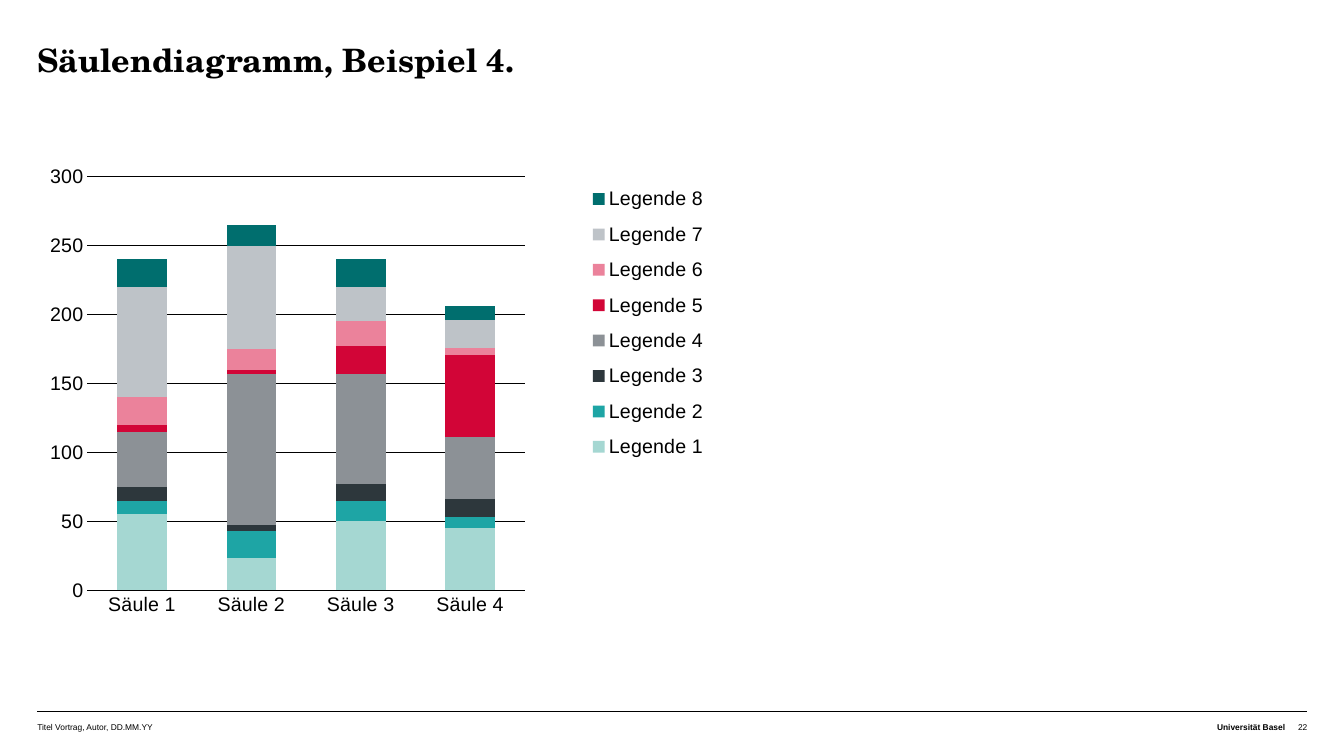
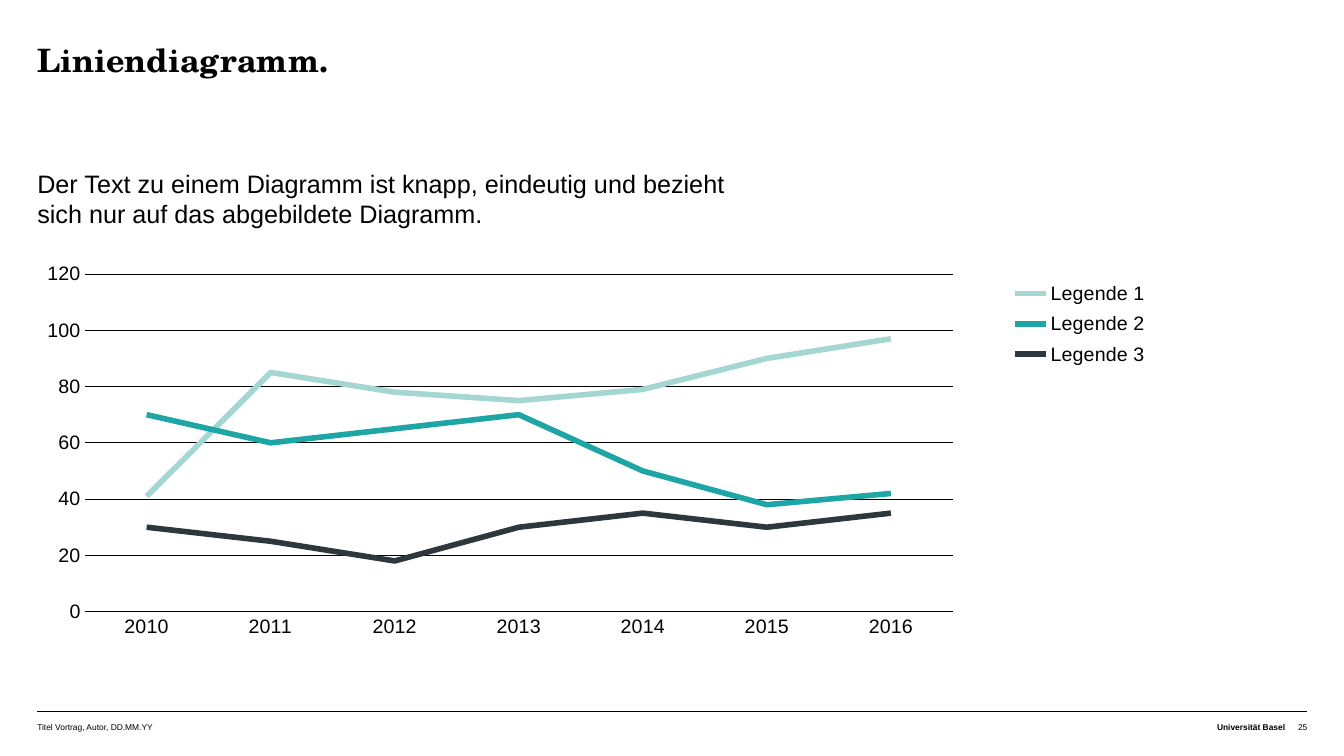
from lxml.etree import SubElement
from pptx import Presentation
from pptx.chart.data import CategoryChartData
from pptx.dml.color import RGBColor
from pptx.enum.chart import XL_CHART_TYPE, XL_LEGEND_POSITION, XL_TICK_MARK
from pptx.enum.shapes import MSO_CONNECTOR
from pptx.enum.text import MSO_ANCHOR, MSO_AUTO_SIZE, PP_ALIGN
from pptx.oxml import parse_xml
from pptx.oxml.ns import nsdecls, qn
from pptx.util import Pt

# Shared style
COLORS = {
    "black": "000000", "mint": "A5D7D2", "teal": "1EA5A5", "anthracite": "2D373C",
    "gray": "8C9196", "red": "D20537", "rose": "EB829B", "silver": "BEC3C8",
    "petrol": "006E6E",
}
BLACK = RGBColor.from_string(COLORS["black"])
SERIES_COLORS = [c for name, c in COLORS.items() if name != "black"]
SANS, SERIF = "Arial", "TeX Gyre Schola"
LEFT, RIGHT = 26.64, 933.84
FOOT_Y, FOOT_H = 514.08, 14.4


def write(sp, box, text, size, font=SANS, bold=False, align=PP_ALIGN.LEFT,
          spacing=None, inset_top=0):
    sp.left, sp.top, sp.width, sp.height = [Pt(v) for v in box]
    tf = sp.text_frame
    tf.word_wrap = True
    tf.auto_size = MSO_AUTO_SIZE.NONE
    tf.vertical_anchor = MSO_ANCHOR.TOP
    tf.margin_left = tf.margin_right = tf.margin_bottom = 0
    tf.margin_top = Pt(inset_top)
    p = tf.paragraphs[0]
    p.alignment = align
    p.space_before = Pt(0)
    if spacing:
        p.line_spacing = Pt(spacing)
    r = p.add_run()
    r.text = text
    r.font.name, r.font.size, r.font.bold = font, Pt(size), bold
    r.font.color.rgb = BLACK
    return p


def make_layout(box, inner=False):
    layout = parse_xml(f"<c:layout {nsdecls('c')}><c:manualLayout/></c:layout>")
    values = [("layoutTarget", "inner")] if inner else []
    values += [("xMode", "edge"), ("yMode", "edge"), *zip("xywh", box)]
    for tag, val in values:
        SubElement(layout[0], qn(f"c:{tag}")).set("val", str(val))
    return layout


# Slide content
SLIDES = [
    dict(
        title="Säulendiagramm, Beispiel 4.", number="22", text=None,
        kind=XL_CHART_TYPE.COLUMN_STACKED, box=(-2.16, 117.36, 652.32, 371.52),
        plot=(0.099, 0.024, 0.479, 0.795), legend=(0.638, 0.02, 0.15, 0.57),
        top=300, step=50, cats=[f"Säule {i}" for i in range(1, 5)],
        rows=[(55, 23, 50, 45), (10, 20, 15, 8), (10, 4, 12, 13), (40, 110, 80, 45),
              (5, 3, 20, 60), (20, 15, 18, 5), (80, 75, 25, 20), (20, 15, 20, 10)],
    ),
    dict(
        title="Liniendiagramm.", number="25",
        text="Der Text zu einem Diagramm ist knapp, eindeutig und bezieht "
             "sich nur auf das abgebildete Diagramm.",
        kind=XL_CHART_TYPE.LINE, box=(9.36, 187.92, 896.4, 275.04),
        plot=(0.057, 0.024, 0.692, 0.881), legend=(0.79, 0.024, 0.12, 0.26),
        top=120, step=20, cats=[str(year) for year in range(2010, 2017)],
        rows=[(41, 85, 78, 75, 79, 90, 97), (70, 60, 65, 70, 50, 38, 42),
              (30, 25, 18, 30, 35, 30, 35)],
    ),
]
FOOTERS = [  # left, width, text (None: slide number), bold, alignment
    (LEFT, 226.8, "Titel Vortrag, Autor, DD.MM.YY", False, PP_ALIGN.LEFT),
    (717.84, 200.16, "Universität Basel", True, PP_ALIGN.RIGHT),
    (918.72, 15.12, None, False, PP_ALIGN.RIGHT),
]

prs = Presentation()
prs.slide_width, prs.slide_height = Pt(960), Pt(540)

for item in SLIDES:
    # Title, and body text where there is one
    s = prs.slides.add_slide(prs.slide_layouts[1 if item["text"] else 5])
    write(s.shapes.title, (LEFT, 31.68, RIGHT - LEFT, 59.76), item["title"], 23,
          SERIF, bold=True, spacing=25)
    if item["text"]:
        p = write(s.placeholders[1], (LEFT, 119.52, 493.2, 46.8), item["text"], 18,
                  spacing=22)
        pPr = p._p.get_or_add_pPr()
        pPr.set("marL", "0")
        pPr.set("indent", "0")
        SubElement(pPr, qn("a:buNone"))

    # Footer rule and texts
    rule = s.shapes.add_connector(MSO_CONNECTOR.STRAIGHT, Pt(LEFT), Pt(508.32),
                                  Pt(RIGHT), Pt(508.32))
    rule.line.color.rgb = BLACK
    rule.line.width = Pt(0.25)
    SubElement(rule._element.spPr, qn("a:effectLst"))
    for x, w, text, bold, align in FOOTERS:
        write(s.shapes.add_textbox(0, 0, 0, 0), (x, FOOT_Y, w, FOOT_H),
              text or item["number"], 6, bold=bold, align=align, inset_top=1.44)

    # Chart data and font
    data = CategoryChartData()
    data.categories = item["cats"]
    for i, row in enumerate(item["rows"], 1):
        data.add_series(f"Legende {i}", row)
    chart = s.shapes.add_chart(item["kind"], *[Pt(v) for v in item["box"]], data).chart
    chart.has_title = False
    chart.font.name, chart.font.size = SANS, Pt(14)
    chart.font.color.rgb = BLACK

    # Axes
    cat, val = chart.category_axis, chart.value_axis
    for axis in (cat, val):
        axis.major_tick_mark = axis.minor_tick_mark = XL_TICK_MARK.NONE
    val.minimum_scale, val.maximum_scale = 0, item["top"]
    val.major_unit = item["step"]
    val.has_major_gridlines = True
    val.format.line.fill.background()
    for line in (cat.format.line, val.major_gridlines.format.line):
        line.color.rgb = BLACK
        line.width = Pt(0.5)

    # Series
    plot = chart.plots[0]
    plot.vary_by_categories = False
    stacked = item["kind"] == XL_CHART_TYPE.COLUMN_STACKED
    if stacked:
        plot.gap_width, plot.overlap = 120, 100
    for series, color in zip(plot.series, SERIES_COLORS):
        rgb = RGBColor.from_string(color)
        if stacked:
            series.format.fill.solid()
            series.format.fill.fore_color.rgb = rgb
        else:
            series.smooth = False
            series.format.line.color.rgb = rgb
            series.format.line.width = Pt(4)

    # Legend and plot area positions
    chart.has_legend = True
    chart.legend.position = XL_LEGEND_POSITION.RIGHT
    chart.legend.include_in_layout = False
    legend = chart.legend._element
    area = plot._element.getparent()
    for parent in (legend, area):
        for old in parent.findall(qn("c:layout")):
            parent.remove(old)
    legend.find(qn("c:legendPos")).addnext(make_layout(item["legend"]))
    area.insert(0, make_layout(item["plot"], inner=True))

prs.save("out.pptx")
